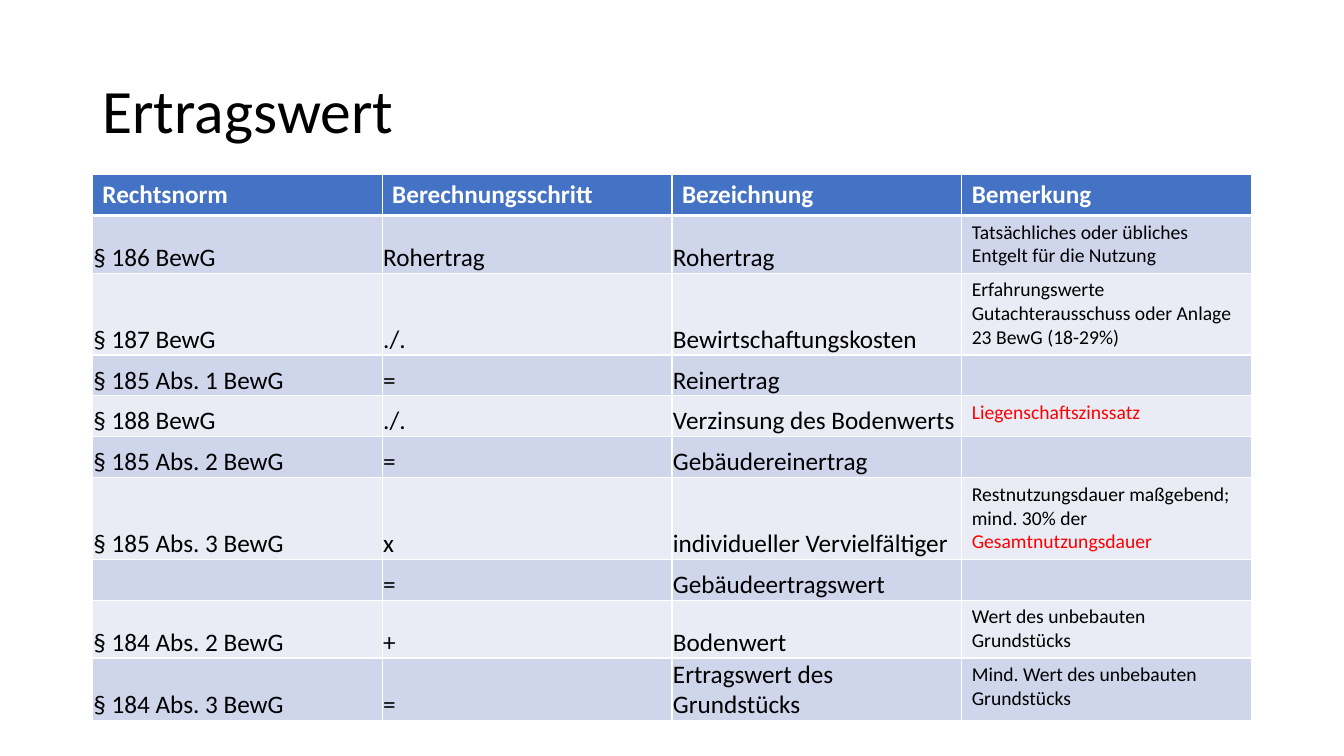
from lxml.etree import SubElement
from pptx import Presentation
from pptx.dml.color import RGBColor
from pptx.enum.text import MSO_ANCHOR as Anchor, MSO_AUTO_SIZE as AutoSize, PP_ALIGN as Align
from pptx.oxml.ns import qn
from pptx.util import Pt

BLACK, WHITE, RED = "000000", "FFFFFF", "FF0000"
HEADER_FILL, BANDS = "4472C4", ("CFD5EA", "E9EBF5")
HEADERS = ("Rechtsnorm", "Berechnungsschritt", "Bezeichnung", "Bemerkung")
STEPS = [
    ("§ 186 BewG", "Rohertrag", "Rohertrag",
     [("Tatsächliches oder übliches Entgelt für die Nutzung", BLACK)]),
    ("§ 187 BewG", "./.", "Bewirtschaftungskosten",
     [("Erfahrungswerte Gutachterausschuss oder Anlage 23 BewG (18-29%)", BLACK)]),
    ("§ 185 Abs. 1 BewG", "=", "Reinertrag", []),
    ("§ 188 BewG", "./.", "Verzinsung des Bodenwerts", [("Liegenschaftszinssatz", RED)]),
    ("§ 185 Abs. 2 BewG", "=", "Gebäudereinertrag", []),
    ("§ 185 Abs. 3 BewG", "x", "individueller Vervielfältiger",
     [("Restnutzungsdauer maßgebend; mind. 30% der ", BLACK), ("Gesamtnutzungsdauer", RED)]),
    ("", "=", "Gebäudeertragswert", []),
    ("§ 184 Abs. 2 BewG", "+", "Bodenwert", [("Wert des unbebauten Grundstücks", BLACK)]),
    ("§ 184 Abs. 3 BewG", "=", "Ertragswert des Grundstücks",
     [("Mind. Wert des unbebauten Grundstücks", BLACK)]),
]


def color(code):
    return RGBColor.from_string(code)


class PageBuilder:
    """Holds the style and the current slide and adds its elements."""

    font = "Calibri"
    left, width = 66, 828

    def __init__(self, deck):
        self.page = deck.slides.add_slide(deck.slide_layouts[5])

    def add_span(self, para, text, size, code=BLACK, bold=False):
        span = para.add_run()
        span.text = text
        span.font.name = self.font
        span.font.size = Pt(size)
        span.font.bold = bold
        span.font.color.rgb = color(code)

    def title(self, text):
        box = self.page.shapes.title
        box.left, box.top, box.width, box.height = Pt(self.left), Pt(28.75), Pt(self.width), Pt(104.4)
        frame = box.text_frame
        frame.auto_size = AutoSize.NONE
        frame.vertical_anchor = Anchor.MIDDLE
        para = frame.paragraphs[0]
        para.alignment = Align.LEFT
        para.line_spacing = 0.9
        self.add_span(para, text, 44)

    def borders(self, cell, top, bottom):
        properties = cell._tc.get_or_add_tcPr()
        for side, weight in (("L", 1), ("R", 1), ("T", top), ("B", bottom)):
            line = SubElement(properties, qn("a:ln" + side), w=str(Pt(weight)))
            fill = SubElement(line, qn("a:solidFill"))
            SubElement(fill, qn("a:srgbClr"), val=WHITE)

    def paint(self, cell, code, top=1, bottom=1):
        self.borders(cell, top, bottom)
        cell.fill.solid()
        cell.fill.fore_color.rgb = color(code)

    def tight(self, cell):
        cell.vertical_anchor = Anchor.BOTTOM
        cell.margin_left = cell.margin_right = cell.margin_top = Pt(0.75)
        cell.margin_bottom = Pt(0)

    def table(self, headers, steps):
        count, row_height = len(steps) + 1, 29.2
        grid = self.page.shapes.add_table(
            count, len(headers), Pt(self.left), Pt(124.7),
            Pt(self.width), Pt(count * row_height)).table
        for column, text in enumerate(headers):
            cell = grid.cell(0, column)
            self.paint(cell, HEADER_FILL, bottom=3)
            self.add_span(cell.text_frame.paragraphs[0], text, 18, WHITE, True)
        for row, (*entries, remark) in enumerate(steps, 1):
            band = BANDS[(row - 1) % 2]
            for column in range(len(headers)):
                self.paint(grid.cell(row, column), band, top=3 if row == 1 else 1)
            for column, text in enumerate(entries):
                if text:
                    cell = grid.cell(row, column)
                    self.tight(cell)
                    self.add_span(cell.text_frame.paragraphs[0], text, 18)
            para = grid.cell(row, len(entries)).text_frame.paragraphs[0]
            for text, code in remark:
                self.add_span(para, text, 14, code)


def main():
    deck = Presentation()
    deck.slide_width, deck.slide_height = Pt(960), Pt(540)
    builder = PageBuilder(deck)
    builder.title("Ertragswert")
    builder.table(HEADERS, STEPS)
    deck.save("out.pptx")


if __name__ == "__main__":
    main()
